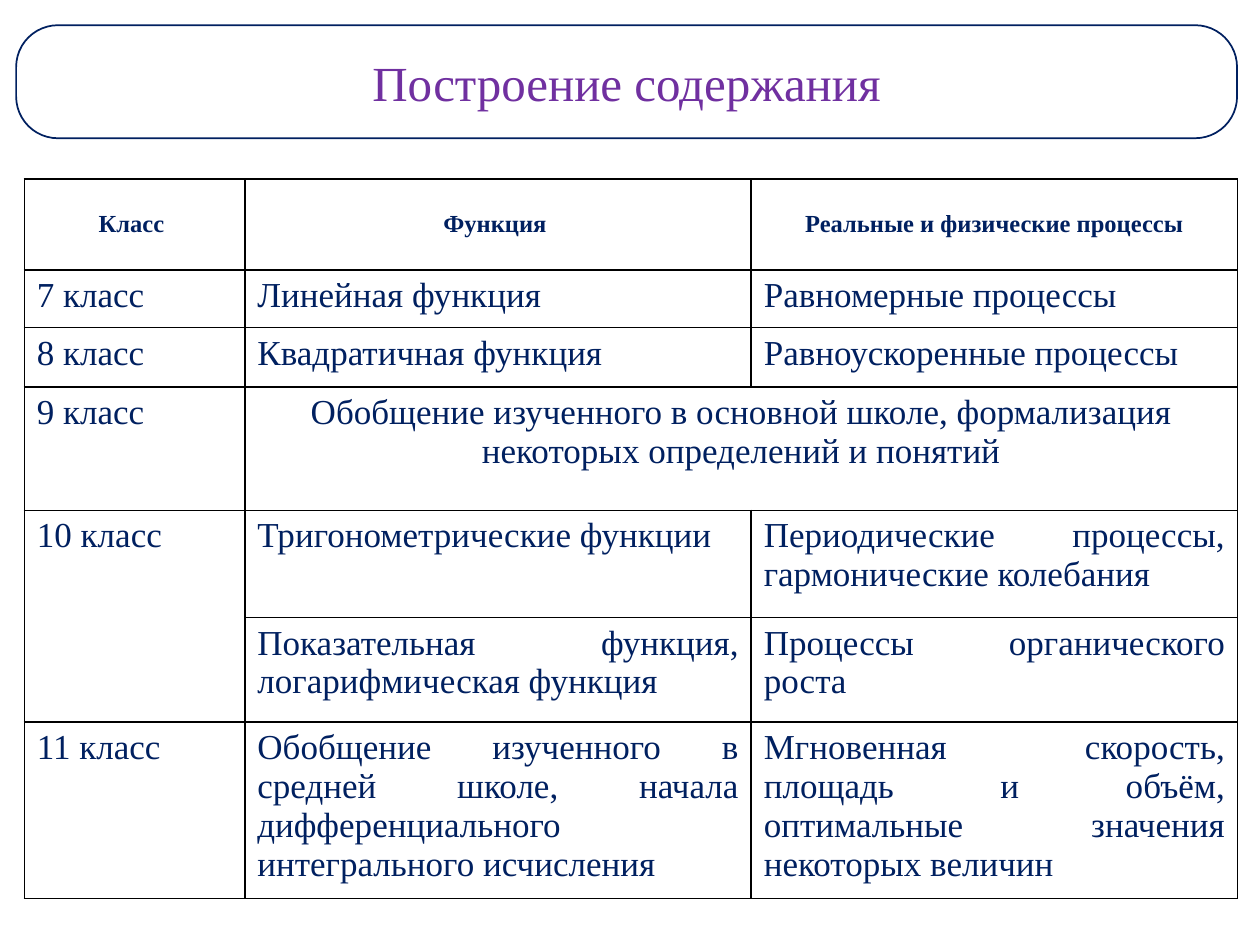
"""Build a slide with a titled table of school functions and processes."""
from dataclasses import dataclass

from lxml import etree
from pptx import Presentation
from pptx.dml.color import RGBColor
from pptx.enum import shapes, text
from pptx.oxml.ns import qn
from pptx.util import Pt

NAVY = RGBColor(0x00, 0x20, 0x60)
PURPLE = RGBColor(0x70, 0x30, 0xA0)
WHITE = RGBColor(0xFF, 0xFF, 0xFF)
BLACK = RGBColor(0x00, 0x00, 0x00)
FONT = "Times New Roman"
LEFT, CENTER, JUSTIFY = text.PP_ALIGN.LEFT, text.PP_ALIGN.CENTER, text.PP_ALIGN.JUSTIFY

COLUMN_WIDTHS = (126, 289.4, 277.9)
ROW_HEIGHTS = (51.8, 33.1, 33.8, 70.6, 61.2, 59.8, 100.8)


@dataclass(frozen=True)
class Entry:
    row: int
    column: int
    wording: str
    alignment: text.PP_ALIGN = JUSTIFY
    row_span: int = 1
    column_span: int = 1


ENTRIES = (
    Entry(0, 0, "Класс ", CENTER),
    Entry(0, 1, "Функция ", CENTER),
    Entry(0, 2, "Реальные и физические процессы", CENTER),
    Entry(1, 0, "7 класс"),
    Entry(1, 1, "Линейная функция"),
    Entry(1, 2, "Равномерные процессы"),
    Entry(2, 0, "8 класс"),
    Entry(2, 1, "Квадратичная функция"),
    Entry(2, 2, "Равноускоренные процессы"),
    Entry(3, 0, "9 класс", LEFT),
    Entry(3, 1, "Обобщение изученного в основной школе, формализация некоторых "
          "определений и понятий", CENTER, column_span=2),
    Entry(4, 0, "10 класс", row_span=2),
    Entry(4, 1, "Тригонометрические функции"),
    Entry(4, 2, "Периодические процессы, гармонические колебания"),
    Entry(5, 1, "Показательная функция, логарифмическая функция"),
    Entry(5, 2, "Процессы органического роста"),
    Entry(6, 0, "11 класс"),
    Entry(6, 1, "Обобщение изученного в средней школе, начала "
          "дифференциального интегрального исчисления"),
    Entry(6, 2, "Мгновенная скорость, площадь и объём, оптимальные значения "
          "некоторых величин"),
)


def write(frame, wording: str, size: float, color: RGBColor,
          alignment: text.PP_ALIGN, bold: bool = False) -> None:
    paragraph = frame.paragraphs[0]
    paragraph.alignment = alignment
    run = paragraph.add_run()
    run.text = wording
    run.font.name = FONT
    run.font.size = Pt(size)
    run.font.bold = bold
    run.font.color.rgb = color


def style_cell(cell) -> None:
    properties = cell._tc.get_or_add_tcPr()
    for side in ("a:lnL", "a:lnR", "a:lnT", "a:lnB"):
        line = etree.SubElement(properties, qn(side), w=str(Pt(1)))
        fill = etree.SubElement(line, qn("a:solidFill"))
        etree.SubElement(fill, qn("a:srgbClr"), val=str(BLACK))
    cell.fill.background()


def add_title(slide) -> None:
    shape = slide.shapes.add_shape(shapes.MSO_SHAPE.ROUNDED_RECTANGLE,
                                   Pt(9.2), Pt(14.4), Pt(697.7), Pt(64.6))
    shape.adjustments[0] = 0.37
    shape.shadow.inherit = False
    shape.fill.solid()
    shape.fill.fore_color.rgb = WHITE
    shape.line.color.rgb = NAVY
    shape.line.width = Pt(1)
    frame = shape.text_frame
    frame.word_wrap = True
    frame.vertical_anchor = text.MSO_ANCHOR.MIDDLE
    frame.margin_left = frame.margin_right = Pt(20)
    frame.margin_top = frame.margin_bottom = Pt(8.6)
    write(frame, "Построение содержания", 28, PURPLE, CENTER)


def add_content_table(slide) -> None:
    table = slide.shapes.add_table(
        len(ROW_HEIGHTS), len(COLUMN_WIDTHS), Pt(13.9), Pt(102.4),
        Pt(sum(COLUMN_WIDTHS)), Pt(sum(ROW_HEIGHTS))).table
    table.first_row = table.horz_banding = False
    for column, width in zip(table.columns, COLUMN_WIDTHS):
        column.width = Pt(width)
    for row, height in zip(table.rows, ROW_HEIGHTS):
        row.height = Pt(height)
    for cell in table.iter_cells():
        style_cell(cell)
    for entry in ENTRIES:
        cell = table.cell(entry.row, entry.column)
        if entry.row_span > 1 or entry.column_span > 1:
            cell.merge(table.cell(entry.row + entry.row_span - 1,
                                  entry.column + entry.column_span - 1))
        header = entry.row == 0
        cell.vertical_anchor = text.MSO_ANCHOR.MIDDLE if header else text.MSO_ANCHOR.TOP
        write(cell.text_frame, entry.wording, 14 if header else 20, NAVY,
              entry.alignment, header)


def main() -> None:
    presentation = Presentation()
    presentation.slide_width, presentation.slide_height = Pt(720), Pt(540)
    slide = presentation.slides.add_slide(presentation.slide_layouts[6])
    add_title(slide)
    add_content_table(slide)
    presentation.save("out.pptx")


if __name__ == "__main__":
    main()
